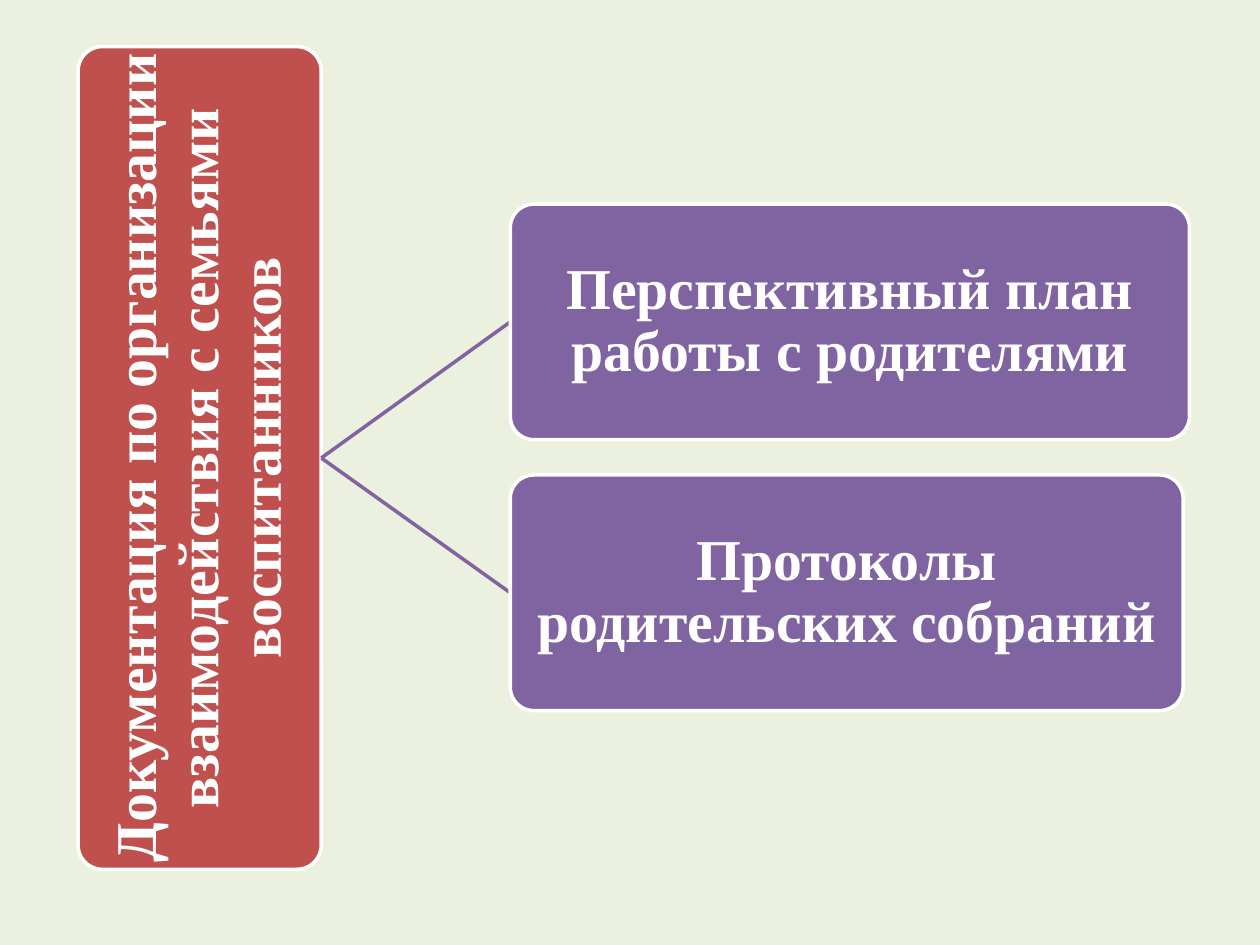
from dataclasses import dataclass

from lxml.etree import SubElement
from pptx import Presentation
from pptx.dml.color import RGBColor
from pptx.enum.shapes import MSO_CONNECTOR, MSO_SHAPE
from pptx.enum.text import MSO_ANCHOR, PP_ALIGN
from pptx.oxml.ns import qn
from pptx.util import Inches, Pt


@dataclass(frozen=True)
class Theme:
    background: RGBColor = RGBColor.from_string("EBF1DE")
    root: RGBColor = RGBColor.from_string("C0504D")
    branch: RGBColor = RGBColor.from_string("8064A2")
    light: RGBColor = RGBColor.from_string("FFFFFF")
    font: str = "Times New Roman"
    text_size: Pt = Pt(33)
    line_width: Pt = Pt(2)


THEME = Theme()

ROOT_TEXT = "Документация по организации взаимодействия с семьями воспитанников"
ROOT_BOX = (0.62, 0.37, 1.93, 6.53)

# Branches: text and width
BRANCHES = [
    ("Перспективный план работы с родителями", 5.39),
    ("Протоколы родительских собраний", 5.34),
]
BRANCH_LEFT, BRANCH_TOP = 4.05, 1.62
BRANCH_HEIGHT, BRANCH_STEP = 1.87, 2.15


def add_card(slide, box, color):
    card = slide.shapes.add_shape(MSO_SHAPE.ROUNDED_RECTANGLE, *map(Inches, box))
    card.adjustments[0] = 0.1
    card.shadow.inherit = False
    card.fill.solid()
    card.fill.fore_color.rgb = color
    card.line.color.rgb = THEME.light
    card.line.width = THEME.line_width


def add_label(slide, box, text, upward=False):
    # The label spans the whole card, beyond the inset of its round corners
    frame = slide.shapes.add_textbox(*map(Inches, box)).text_frame
    frame.word_wrap = True
    frame.vertical_anchor = MSO_ANCHOR.MIDDLE
    frame.margin_left = frame.margin_right = Inches(0.02)
    frame.margin_top = frame.margin_bottom = Inches(0.02)
    if upward:
        frame._txBody.bodyPr.set("vert", "vert270")
    frame.text = text
    paragraph = frame.paragraphs[0]
    paragraph.alignment = PP_ALIGN.CENTER
    paragraph.line_spacing = 0.9
    font = paragraph.runs[0].font
    font.name = THEME.font
    font.size = THEME.text_size
    font.bold = True
    font.color.rgb = THEME.light


def add_link(slide, start, end):
    link = slide.shapes.add_connector(
        MSO_CONNECTOR.STRAIGHT, *map(Inches, (*start, *end)))
    link.line.color.rgb = THEME.branch
    link.line.width = THEME.line_width
    SubElement(link._element.spPr, qn("a:effectLst"))


def main():
    prs = Presentation()
    prs.slide_width, prs.slide_height = Inches(10), Inches(7.5)
    slide = prs.slides.add_slide(prs.slide_layouts[6])
    slide.background.fill.solid()
    slide.background.fill.fore_color.rgb = THEME.background

    # Root topic, read from bottom to top
    add_card(slide, ROOT_BOX, THEME.root)
    add_label(slide, ROOT_BOX, ROOT_TEXT, upward=True)
    left, top, width, height = ROOT_BOX
    root_exit = (left + width, top + height / 2)

    # Documents linked to the root
    for index, (text, branch_width) in enumerate(BRANCHES):
        branch_top = BRANCH_TOP + index * BRANCH_STEP
        box = (BRANCH_LEFT, branch_top, branch_width, BRANCH_HEIGHT)
        add_link(slide, root_exit, (BRANCH_LEFT, branch_top + BRANCH_HEIGHT / 2))
        add_card(slide, box, THEME.branch)
        add_label(slide, box, text)

    prs.save("out.pptx")


if __name__ == "__main__":
    main()
